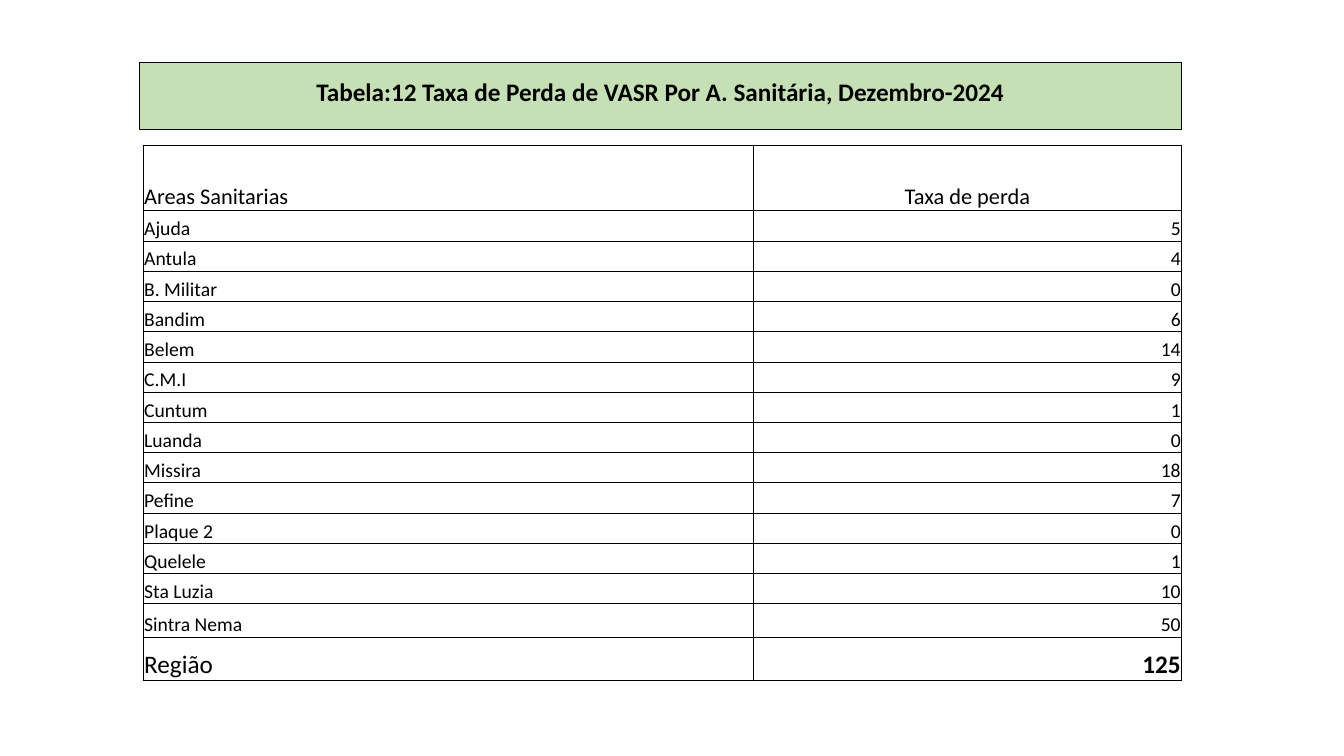
import pptx
import pptx.util
import pptx.oxml
import pptx.dml.color
import pptx.enum.shapes
import pptx.enum.text

Inches, Pt = pptx.util.Inches, pptx.util.Pt
ALIGN = pptx.enum.text.PP_ALIGN
ANCHOR = pptx.enum.text.MSO_ANCHOR
FONT = "Calibri"
COLORS = {"ink": "000000", "paper": "FFFFFF", "band": "C5E0B4"}
NS = "http://schemas.openxmlformats.org/drawingml/2006/main"

TITLE = "Tabela:12 Taxa de Perda de VASR Por A. Sanitária, Dezembro-2024"
HEAD = ("Areas Sanitarias", "Taxa de perda")
RATES = [
    ("Ajuda", 5), ("Antula", 4), ("B. Militar", 0), ("Bandim", 6),
    ("Belem", 14), ("C.M.I", 9), ("Cuntum", 1), ("Luanda", 0),
    ("Missira", 18), ("Pefine", 7), ("Plaque 2", 0), ("Quelele", 1),
    ("Sta Luzia", 10), ("Sintra Nema", 50),
]
TOTAL = ("Região", 125)
COLS = (6.05, 4.25)
ROWS = [1.27, 0.65] + [0.3] * (len(RATES) - 1) + [0.33, 0.43]


def color(name):
    return pptx.dml.color.RGBColor.from_string(COLORS[name])


def write(para, text, size, align, bold=False):
    para.text = str(text)
    para.alignment = align
    font = para.font
    font.name, font.size, font.bold = FONT, Pt(size), bold
    font.color.rgb = color("ink")


def edge(cell, widths):
    """Draw the left, right, top and bottom borders; a width of 0 hides one."""
    props = cell._tc.get_or_add_tcPr()
    for spot, (side, width) in enumerate(zip("LRTB", widths)):
        paint = (f'<a:solidFill><a:srgbClr val="{COLORS["ink"]}"/></a:solidFill>'
                 if width else "<a:noFill/>")
        line = pptx.oxml.parse_xml(
            f'<a:ln{side} xmlns:a="{NS}" w="{Pt(width)}">{paint}</a:ln{side}>')
        props.insert(spot, line)


def paint(cell, widths):
    cell.fill.solid()
    cell.fill.fore_color.rgb = color("paper")
    cell.margin_left = cell.margin_right = cell.margin_top = Inches(0.01)
    cell.margin_bottom = 0
    cell.vertical_anchor = ANCHOR.BOTTOM
    edge(cell, widths)


def add_rates(slide, left, top):
    frame = slide.shapes.add_table(
        len(ROWS), len(COLS), Inches(left), Inches(top),
        Inches(sum(COLS)), Inches(sum(ROWS)))
    table = frame.table
    table.first_row = table.horz_banding = False
    for col, width in zip(table.columns, COLS):
        col.width = Inches(width)
    for row, height in zip(table.rows, ROWS):
        row.height = Inches(height)

    for cell in table.rows[0].cells:
        paint(cell, (0, 0, 0, 1))
    table.cell(0, 0).merge(table.cell(0, 1))

    last = len(ROWS) - 1
    for r, pair in enumerate([HEAD, *RATES, TOTAL], 1):
        size = {1: 16, last: 18}.get(r, 14)
        upper = 1 if r == 1 else 0.5
        lower = 1 if r == last else 0.5
        right = ALIGN.CENTER if r == 1 else ALIGN.RIGHT
        for c, align in enumerate((ALIGN.LEFT, right)):
            cell = table.cell(r, c)
            paint(cell, (0.5, 0.5, upper, lower))
            write(cell.text_frame.paragraphs[0], pair[c], size, align,
                  bold=(r == last and c == 1))


def add_title(slide, left, top, width, height):
    box = slide.shapes.add_shape(
        pptx.enum.shapes.MSO_SHAPE.RECTANGLE,
        Inches(left), Inches(top), Inches(width), Inches(height))
    box.shadow.inherit = False
    box.fill.solid()
    box.fill.fore_color.rgb = color("band")
    box.line.color.rgb = color("ink")
    box.line.width = Pt(0.5)
    frame = box.text_frame
    frame.word_wrap = True
    frame.vertical_anchor = ANCHOR.MIDDLE
    frame.margin_bottom = Inches(0.1)
    para = frame.paragraphs[0]
    write(para, TITLE, 18, ALIGN.CENTER, bold=True)
    para.line_spacing = 0.9


def main():
    deck = pptx.Presentation()
    deck.slide_width, deck.slide_height = Inches(13.33), Inches(7.5)
    slide = deck.slides.add_slide(deck.slide_layouts[6])
    add_rates(slide, 1.42, 0.17)
    add_title(slide, 1.38, 0.62, 10.34, 0.66)
    deck.save("out.pptx")


if __name__ == "__main__":
    main()
